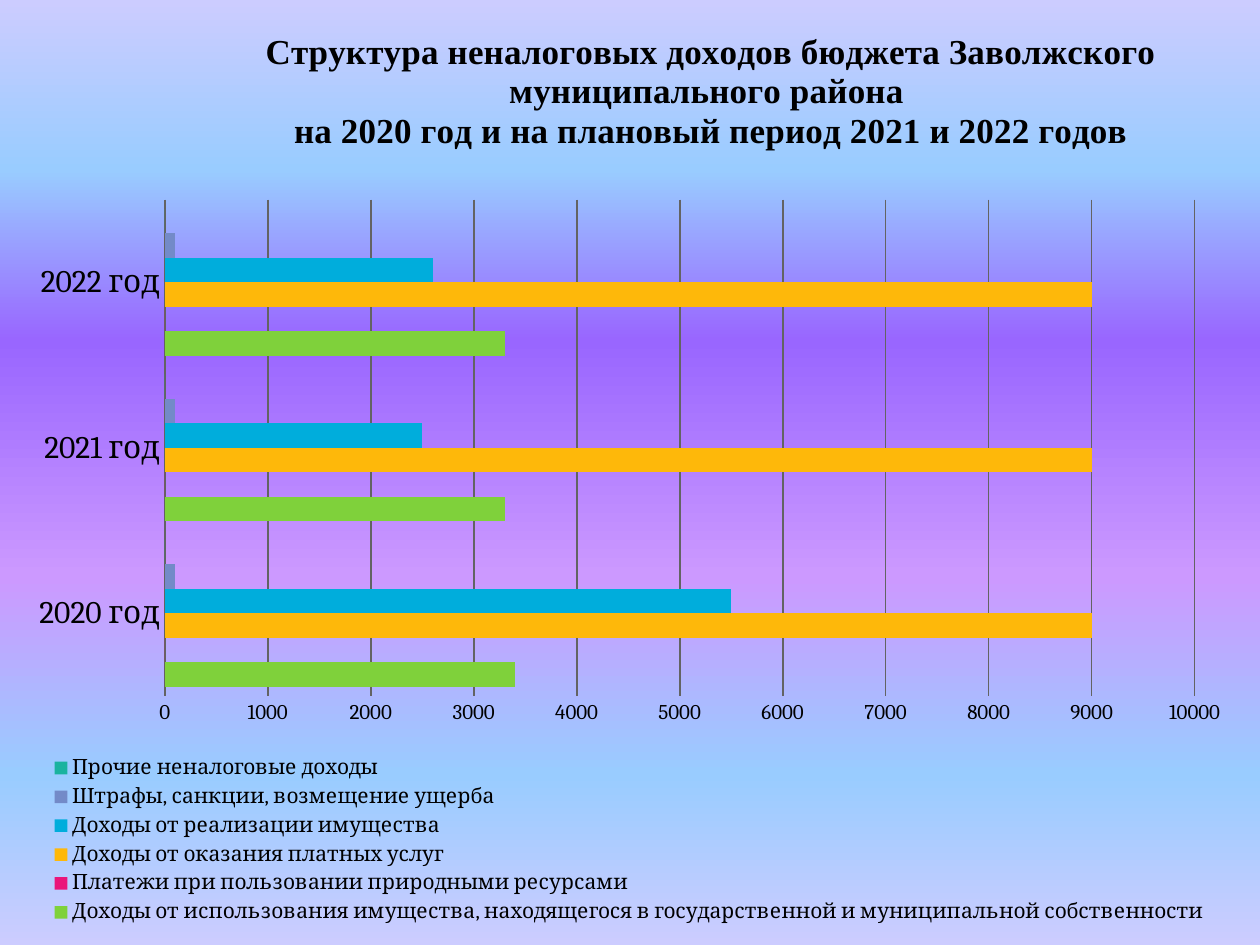
"""Build the slide with a bar chart of non-tax revenues of the district budget."""
from copy import deepcopy

from lxml import etree
from pptx import Presentation
from pptx.chart.data import CategoryChartData
from pptx.dml.color import RGBColor
from pptx.enum.chart import XL_CHART_TYPE, XL_LEGEND_POSITION, XL_TICK_MARK
from pptx.oxml.ns import qn
from pptx.util import Pt

BAR_CLUSTERED = XL_CHART_TYPE.BAR_CLUSTERED
BOTTOM = XL_LEGEND_POSITION.BOTTOM
NO_TICK = XL_TICK_MARK.NONE

CHART_WIDTH, CHART_HEIGHT = 702.72, 516.24
COLORS = {
    "text": "000000",
    "grid": "636363",
    "lavender": "CCCCFF",
    "sky": "99CCFF",
    "violet": "9966FF",
    "lilac": "CC99FF",
}
BACKGROUND = [
    (0, "lavender"), (0.18, "sky"), (0.36, "violet"),
    (0.61, "lilac"), (0.82, "sky"), (1, "lavender"),
]
TITLE_LINES = [
    "Структура неналоговых доходов бюджета Заволжского",
    "муниципального района ",
    "на 2020 год и на плановый период 2021 и 2022 годов",
]
YEARS = ["2020 год", "2021 год", "2022 год"]
REVENUES = [
    ("Доходы от использования имущества, находящегося в государственной и "
     "муниципальной собственности", (3400, 3300, 3300), "7FD13B"),
    ("Платежи при пользовании природными ресурсами", (0, 0, 0), "EA157A"),
    ("Доходы от оказания платных услуг", (9000, 9000, 9000), "FEB80A"),
    ("Доходы от реализации имущества", (5500, 2500, 2600), "00ADDC"),
    ("Штрафы, санкции, возмещение ущерба", (100, 100, 100), "738AC8"),
    ("Прочие неналоговые доходы", (0, 0, 0), "1AB39F"),
]


def set_font(font, name, size, bold=False):
    for key, value in {"name": name, "size": Pt(size), "bold": bold}.items():
        setattr(font, key, value)
    font.color.rgb = RGBColor.from_string(COLORS["text"])


def set_layout(element, index, modes, **lengths):
    for old in element.findall(qn("c:layout")):
        element.remove(old)
    layout = etree.Element(qn("c:layout"))
    manual = etree.SubElement(layout, qn("c:manualLayout"))
    for key, value in modes.items():
        etree.SubElement(manual, qn(f"c:{key}")).set("val", value)
    for key, value in lengths.items():
        share = value / (CHART_WIDTH if key in "xw" else CHART_HEIGHT)
        etree.SubElement(manual, qn(f"c:{key}")).set("val", f"{share:.4f}")
    element.insert(index, layout)


deck = Presentation()
deck.slide_width, deck.slide_height = Pt(720), Pt(540)
page = deck.slides.add_slide(deck.slide_layouts[6])

fill = page.background.fill
fill.gradient()
fill.gradient_angle = 270
stop_list = page._element.find(".//" + qn("a:gsLst"))
while len(stop_list) < len(BACKGROUND):
    stop_list.append(deepcopy(stop_list[0]))
for stop, (position, color) in zip(fill.gradient_stops, BACKGROUND):
    stop.position = position
    stop.color.rgb = RGBColor.from_string(COLORS[color])

data = CategoryChartData()
data.categories = YEARS
for name, values, color in REVENUES:
    data.add_series(name, values)
chart = page.shapes.add_chart(
    BAR_CLUSTERED, Pt(8.64), Pt(15.12), Pt(CHART_WIDTH), Pt(CHART_HEIGHT), data
).chart
set_font(chart.font, "Cambria", 18)

plot = chart.plots[0]
for key, value in {"gap_width": 75, "overlap": 0, "vary_by_categories": False}.items():
    setattr(plot, key, value)
for series, (name, values, color) in zip(plot.series, REVENUES):
    series.format.fill.solid()
    series.format.fill.fore_color.rgb = RGBColor.from_string(color)

year_axis, value_axis = chart.category_axis, chart.value_axis
scale = {"minimum_scale": 0, "maximum_scale": 10000, "major_unit": 1000,
         "has_major_gridlines": True}
for key, value in scale.items():
    setattr(value_axis, key, value)
for axis, size in ((year_axis, 18), (value_axis, 12)):
    axis.major_tick_mark = axis.minor_tick_mark = NO_TICK
    set_font(axis.tick_labels.font, "Cambria", size)
for line in (year_axis.format.line, value_axis.major_gridlines.format.line):
    line.width = Pt(1)
    line.color.rgb = RGBColor.from_string(COLORS["grid"])
value_axis.format.line.fill.background()

chart.has_title = True
frame = chart.chart_title.text_frame
for number, text in enumerate(TITLE_LINES):
    para = frame.add_paragraph() if number else frame.paragraphs[0]
    span = para.add_run()
    span.text = text
    set_font(span.font, "Times New Roman", 20, True)

chart.has_legend = True
legend = chart.legend
legend.position = BOTTOM
legend.include_in_layout = False
set_font(legend.font, "Cambria", 12)

edge = {"xMode": "edge", "yMode": "edge"}
set_layout(chart.chart_title._element, 1, edge, x=141, y=0)
set_layout(legend._element, 1, edge, x=21, y=414, w=660.5, h=102)
set_layout(chart._chartSpace.find(".//" + qn("c:plotArea")), 0,
           {"layoutTarget": "inner", **edge}, x=85.5, y=99, w=588.5, h=283.5)

deck.save("out.pptx")
